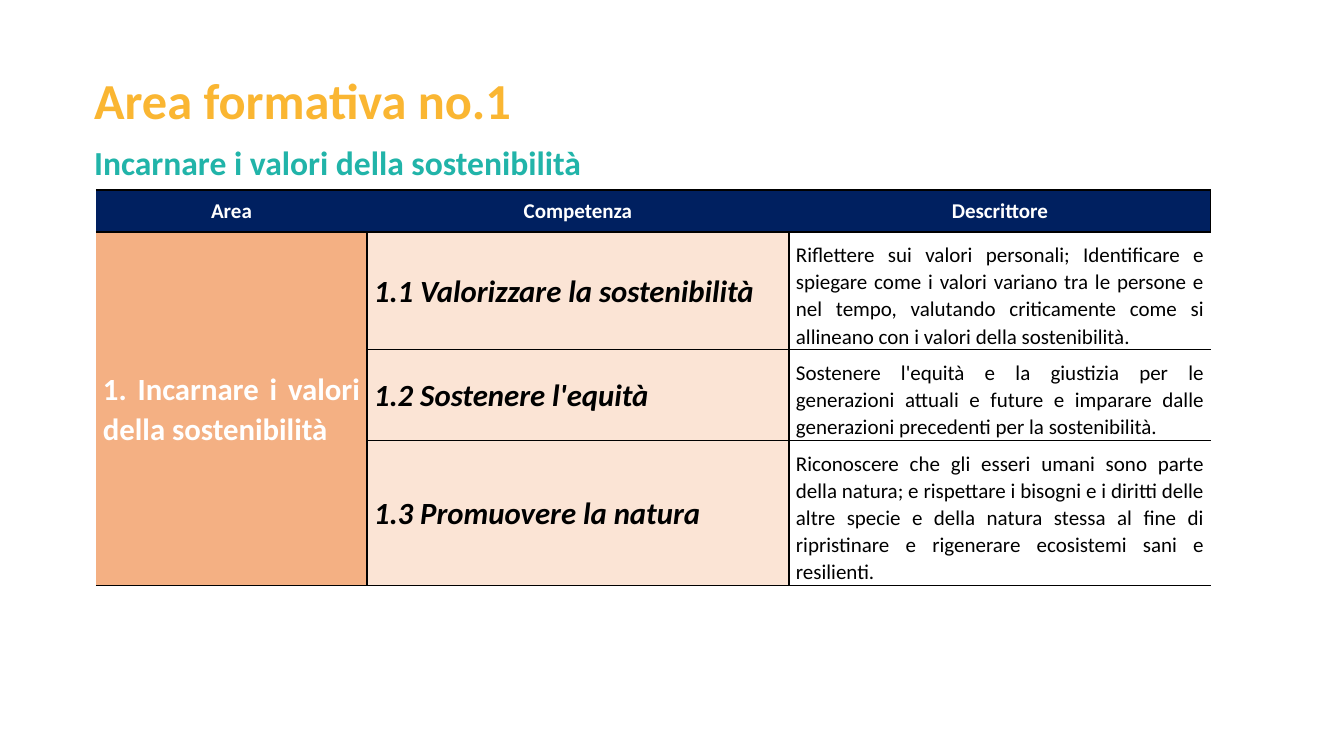
from lxml import etree
from pptx import Presentation
from pptx.dml.color import RGBColor
from pptx.enum.text import MSO_ANCHOR, MSO_AUTO_SIZE, PP_ALIGN
from pptx.oxml.ns import qn
from pptx.util import Pt

SCALE = 914400 / 100.8
FONT = "Calibri"
LEFT, CENTER, JUSTIFY = PP_ALIGN.LEFT, PP_ALIGN.CENTER, PP_ALIGN.JUSTIFY
TOP, MIDDLE = MSO_ANCHOR.TOP, MSO_ANCHOR.MIDDLE
NO_AUTOFIT = MSO_AUTO_SIZE.NONE

WHITE = RGBColor(0xFF, 0xFF, 0xFF)
BLACK = RGBColor(0x00, 0x00, 0x00)
AMBER = RGBColor(0xFA, 0xB6, 0x32)
TEAL = RGBColor(0x21, 0xB4, 0xA9)
NAVY = RGBColor(0x00, 0x20, 0x60)
ORANGE = RGBColor(0xF4, 0xB0, 0x83)
PEACH = RGBColor(0xFB, 0xE4, 0xD5)

HEADERS = [("Area", "TB"), ("Competenza", "TB"), ("Descrittore", "RTB")]
AREA = "1. Incarnare i valori della sostenibilità"
COMPETENCES = [
    ("1.1 Valorizzare la sostenibilità",
     "Riflettere sui valori personali; Identificare e spiegare come i valori "
     "variano tra le persone e nel tempo, valutando criticamente come si "
     "allineano con i valori della sostenibilità."),
    ("1.2 Sostenere l'equità",
     "Sostenere l'equità e la giustizia per le generazioni attuali e future e "
     "imparare dalle generazioni precedenti per la sostenibilità."),
    ("1.3 Promuovere la natura",
     "Riconoscere che gli esseri umani sono parte della natura; e rispettare i "
     "bisogni e i diritti delle altre specie e della natura stessa al fine di "
     "ripristinare e rigenerare ecosistemi sani e resilienti."),
]
COLUMN_WIDTHS = [271, 422, 422]
ROW_HEIGHTS = [42, 115, 88, 142]


def px(length):
    return round(length * SCALE)


class SlideBuilder:
    def __init__(self, slide, font):
        self.slide = slide
        self.font = font

    def add_text(self, paragraph, text, size, color, align, bold=True, italic=False):
        paragraph.alignment = align
        run = paragraph.add_run()
        run.text = text
        run.font.name = self.font
        run.font.size = Pt(size)
        run.font.bold = bold
        run.font.italic = italic
        run.font.color.rgb = color

    def heading(self, shape, box, text, size, color):
        shape.left, shape.top, shape.width, shape.height = map(px, box)
        frame = shape.text_frame
        frame.word_wrap = True
        frame.auto_size = NO_AUTOFIT
        frame.vertical_anchor = TOP
        paragraph = frame.paragraphs[0]
        paragraph.space_before = Pt(0)
        self.add_text(paragraph, text, size, color, LEFT)

    def table(self, left, top, widths, heights):
        frame = self.slide.shapes.add_table(
            len(heights), len(widths), px(left), px(top),
            px(sum(widths)), px(sum(heights)))
        table = frame.table
        table.first_row = False
        table.horz_banding = False
        for column, width in zip(table.columns, widths):
            column.width = px(width)
        for row, height in zip(table.rows, heights):
            row.height = px(height)
        return table

    def borders(self, cell, sides):
        properties = cell._tc.get_or_add_tcPr()
        for side in "LRTB":
            line = etree.SubElement(properties, qn(f"a:ln{side}"), w=str(Pt(1)))
            if side in sides:
                fill = etree.SubElement(line, qn("a:solidFill"))
                etree.SubElement(fill, qn("a:srgbClr"), val=str(BLACK))
            else:
                etree.SubElement(line, qn("a:noFill"))

    def cell(self, cell, text, sides, fill, size, color, align, top=0, **style):
        self.borders(cell, sides)
        if fill is None:
            cell.fill.background()
        else:
            cell.fill.solid()
            cell.fill.fore_color.rgb = fill
        cell.margin_left = cell.margin_right = px(7)
        cell.margin_top, cell.margin_bottom = px(top), 0
        cell.vertical_anchor = MIDDLE
        paragraph = cell.text_frame.paragraphs[0]
        paragraph.line_spacing = 1.06
        self.add_text(paragraph, text, size, color, align, **style)


def main():
    presentation = Presentation()
    presentation.slide_width = px(1344)
    presentation.slide_height = px(756)
    slide = presentation.slides.add_slide(presentation.slide_layouts[0])
    builder = SlideBuilder(slide, FONT)

    builder.heading(slide.shapes.title, (84, 64, 905, 72),
                    "Area formativa no.1", 36, AMBER)
    builder.heading(slide.placeholders[1], (84, 137, 848, 50),
                    "Incarnare i valori della sostenibilità", 24, TEAL)

    table = builder.table(96, 190, COLUMN_WIDTHS, ROW_HEIGHTS)
    for column, (header, sides) in enumerate(HEADERS):
        builder.cell(table.cell(0, column), header, sides, NAVY, 15, WHITE, CENTER)

    last_row = len(COMPETENCES)
    area_cell = table.cell(1, 0)
    area_cell.merge(table.cell(last_row, 0))
    builder.cell(area_cell, AREA, "RTB", ORANGE, 22, WHITE, JUSTIFY)
    for row in range(2, last_row + 1):
        builder.borders(table.cell(row, 0), "RB" if row == last_row else "R")

    for row, (competence, descriptor) in enumerate(COMPETENCES, start=1):
        builder.cell(table.cell(row, 1), competence, "LRTB", PEACH, 22, BLACK,
                     JUSTIFY, italic=True)
        builder.cell(table.cell(row, 2), descriptor, "LTB", None, 15, BLACK,
                     JUSTIFY, top=9, bold=False)

    presentation.save("out.pptx")


if __name__ == "__main__":
    main()
